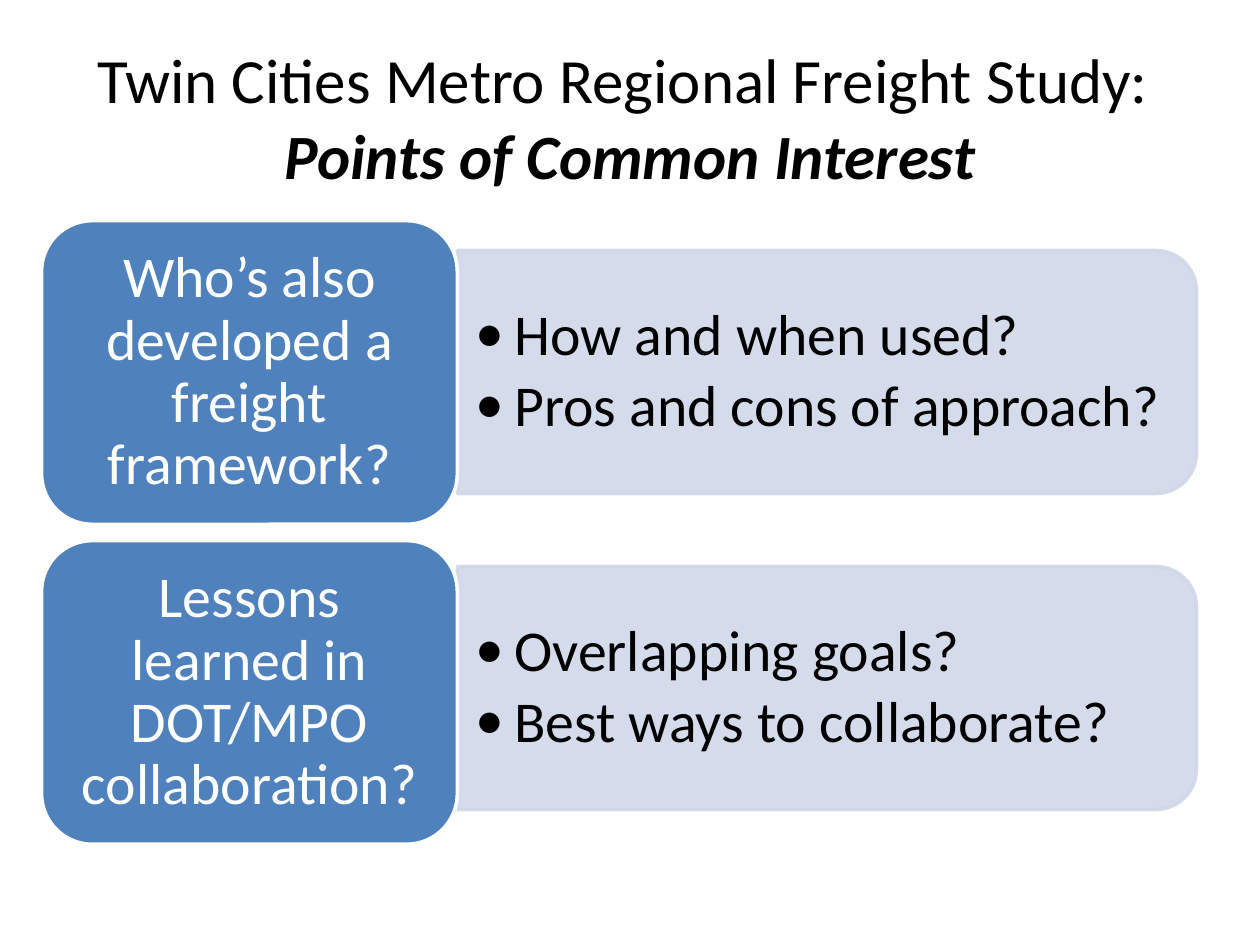
"""Build the slide on points of common interest in the freight study."""
from dataclasses import dataclass

import lxml.etree
import pptx
import pptx.dml.color
import pptx.enum.shapes
import pptx.enum.text
import pptx.oxml.ns
import pptx.util

Cm = pptx.util.Cm
Pt = pptx.util.Pt
SHAPES = pptx.enum.shapes.MSO_SHAPE
ALIGN = pptx.enum.text.PP_ALIGN
qn = pptx.oxml.ns.qn

PANEL_COLOR = "D0D8E8"
HEADING_COLOR = "4F81BD"
WHITE = "FFFFFF"
BLACK = "000000"
COLUMN_EDGE = 9.22
BODY_SIZE = 33
FRAME_FORMAT = {
    "word_wrap": True,
    "auto_size": pptx.enum.text.MSO_AUTO_SIZE.NONE,
    "vertical_anchor": pptx.enum.text.MSO_ANCHOR.MIDDLE,
}
INSETS = {
    "margin_left": Cm(0.36),
    "margin_right": Cm(0.36),
    "margin_top": Cm(0.18),
    "margin_bottom": Cm(0.18),
}


@dataclass(frozen=True)
class Box:
    left: float
    top: float
    width: float
    height: float

    def lengths(self) -> tuple:
        return Cm(self.left), Cm(self.top), Cm(self.width), Cm(self.height)

    def before_quarter_turn(self) -> "Box":
        shift = (self.width - self.height) / 2
        return Box(self.left + shift, self.top - shift, self.height, self.width)


@dataclass(frozen=True)
class Topic:
    heading: str
    questions: tuple[str, ...]
    heading_top: float
    panel_top: float


TOPICS = (
    Topic("Who’s also developed a freight framework?",
          ("How and when used?", "Pros and cons of approach?"), 4.45, 5.05),
    Topic("Lessons learned in DOT/MPO collaboration?",
          ("Overlapping goals?", "Best ways to collaborate?"), 10.9, 11.42),
)


def set_values(target, values: dict) -> None:
    for name, value in values.items():
        setattr(target, name, value)


def paint(fill, color: str, opacity: int = 100) -> None:
    fill.solid()
    fill.fore_color.rgb = pptx.dml.color.RGBColor.from_string(color)
    if opacity < 100:
        element = fill._xPr.find(qn("a:solidFill"))[0]
        lxml.etree.SubElement(element, qn("a:alpha"), val=str(opacity * 1000))


def add_text(paragraph, text: str, size: int, color: str, **style) -> None:
    run = paragraph.add_run()
    run.text = text
    set_values(run.font, {"name": "Calibri", "size": Pt(size), **style})
    paint(run.font.fill, color)


def add_bullet(paragraph) -> None:
    properties = paragraph._p.get_or_add_pPr()
    properties.set("marL", str(Cm(0.79)))
    properties.set("indent", str(-Cm(0.79)))
    lxml.etree.SubElement(properties, qn("a:buFont"), typeface="Calibri")
    lxml.etree.SubElement(properties, qn("a:buChar"), char="•")


def add_box(slide, kind, box: Box, color: str, line_color: str, opacity: int = 100):
    shape = slide.shapes.add_shape(kind, *box.lengths())
    shape.shadow.inherit = False
    paint(shape.fill, color, opacity)
    shape.line.width = Pt(2)
    paint(shape.line.fill, line_color, opacity)
    return shape


def add_title(slide) -> None:
    title = slide.shapes.add_textbox(*Box(1.27, 0.76, 22.86, 3.18).lengths())
    set_values(title.text_frame, FRAME_FORMAT)
    paragraph = title.text_frame.paragraphs[0]
    paragraph.alignment = ALIGN.CENTER
    add_text(paragraph, "Twin Cities Metro Regional Freight Study: ", 36, BLACK)
    paragraph.add_line_break()
    add_text(paragraph, "Points of Common Interest", 36, BLACK, bold=True, italic=True)


def add_panel(slide, topic: Topic) -> None:
    box = Box(COLUMN_EDGE, topic.panel_top, 14.9, 4.9)
    panel = add_box(slide, SHAPES.ROUND_2_SAME_RECTANGLE, box.before_quarter_turn(),
                    PANEL_COLOR, PANEL_COLOR, 90)
    panel.rotation = 90
    frame = slide.shapes.add_textbox(*box.lengths()).text_frame
    set_values(frame, FRAME_FORMAT | INSETS)
    for index, question in enumerate(topic.questions):
        paragraph = frame.add_paragraph() if index else frame.paragraphs[0]
        set_values(paragraph, {"alignment": ALIGN.LEFT, "line_spacing": 0.9,
                               "space_after": Pt(5), "level": 1})
        add_bullet(paragraph)
        add_text(paragraph, question, BODY_SIZE, BLACK)


def add_heading(slide, topic: Topic) -> None:
    box = Box(0.84, topic.heading_top, COLUMN_EDGE - 0.84, 6.12)
    shape = add_box(slide, SHAPES.ROUNDED_RECTANGLE, box, HEADING_COLOR, WHITE)
    set_values(shape.text_frame, FRAME_FORMAT | INSETS)
    paragraph = shape.text_frame.paragraphs[0]
    set_values(paragraph, {"alignment": ALIGN.CENTER, "line_spacing": 0.9})
    add_text(paragraph, topic.heading, BODY_SIZE, WHITE)


def main() -> None:
    presentation = pptx.Presentation()
    set_values(presentation, {"slide_width": Cm(25.4), "slide_height": Cm(19.05)})
    slide = presentation.slides.add_slide(presentation.slide_layouts[6])
    add_title(slide)
    for topic in TOPICS:
        add_panel(slide, topic)
        add_heading(slide, topic)
    presentation.save("out.pptx")


if __name__ == "__main__":
    main()
